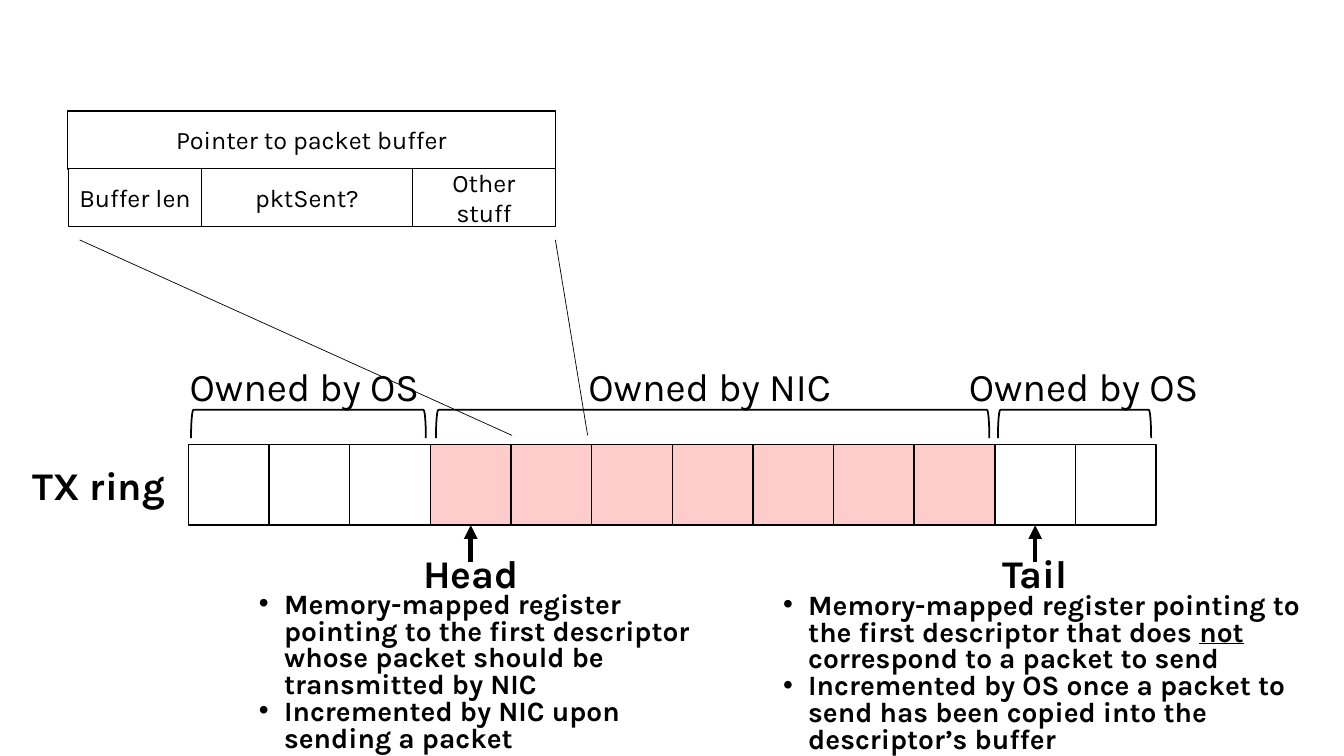
from dataclasses import dataclass

from lxml import etree
from pptx import Presentation
from pptx.dml.color import RGBColor
from pptx.enum.shapes import MSO_CONNECTOR, MSO_SHAPE
from pptx.enum.text import MSO_ANCHOR, PP_ALIGN
from pptx.oxml.ns import qn
from pptx.util import Pt

RECT = MSO_SHAPE.RECTANGLE
BRACKET = MSO_SHAPE.LEFT_BRACKET
STRAIGHT = MSO_CONNECTOR.STRAIGHT
CENTER, LEFT = PP_ALIGN.CENTER, PP_ALIGN.LEFT
MIDDLE, TOP = MSO_ANCHOR.MIDDLE, MSO_ANCHOR.TOP

COLORS = {"ink": "000000", "os": "FFFFFF", "nic": "FFCCCC"}
FIELD = {"name": "Karla", "size": Pt(18), "bold": False}
OWNER = {"name": "Karla", "size": Pt(28), "bold": False}
TITLE = {"name": "Karla", "size": Pt(28), "bold": True}
BULLET = {"name": "Karla", "size": Pt(20), "bold": True}

CELL = 57.6
RING_LEFT, RING_TOP = 134.64, 317.52
BRACKET_TOP, BRACKET_HEIGHT = 292.75, 20.16
ROW_HEIGHT = 41.4
LABEL_HEIGHT = 41.04
POINTER_WIDTH = 96.48


@dataclass
class Box:
    left: float
    top: float
    width: float
    height: float


@dataclass
class Field:
    text: str
    box: Box


@dataclass
class Owner:
    text: str
    color: str
    cells: int
    bracket_left: float
    bracket_width: float
    label: Box


@dataclass
class Pointer:
    name: str
    cell: int
    box: Box
    bullets: list[list[str]]


FIELDS = [
    Field("Pointer to packet buffer", Box(48.24, 79.2, 348.48, ROW_HEIGHT)),
    Field("Buffer len", Box(48.96, 120.4, 95.04, ROW_HEIGHT)),
    Field("pktSent?", Box(144, 120.4, 150.48, ROW_HEIGHT)),
    Field("Other stuff", Box(294.48, 120.4, 102.24, ROW_HEIGHT)),
]
OWNERS = [
    Owner("Owned by OS", "os", 3, 136.44, 167.76, Box(109.44, 255.4, 216, LABEL_HEIGHT)),
    Owner("Owned by NIC", "nic", 7, 311.4, 395.28, Box(307.44, 255.1, 398.88, LABEL_HEIGHT)),
    Owner("Owned by OS", "os", 2, 712.8, 109.44, Box(666, 255.1, 216, LABEL_HEIGHT)),
]
POINTERS = [
    Pointer("Head", 3, Box(177.84, 419.76, 334.8, 114.48), [
        ["Memory-mapped register pointing to the first descriptor whose packet "
         "should be transmitted by NIC"],
        ["Incremented by NIC upon sending a packet"],
    ]),
    Pointer("Tail", 10, Box(552.24, 420.48, 390.96, 129.6), [
        ["Memory-mapped register pointing to the first descriptor that does ",
         "not", " correspond to a packet to send"],
        ["Incremented by OS once a packet to send has been copied into the "
         "descriptor’s buffer"],
    ]),
]
ZOOM_LINES = [(365.76, 311.04, 56.88, 171.36), (419.76, 311.04, 396.72, 171.36)]


def color(key: str) -> RGBColor:
    return RGBColor.from_string(COLORS[key])


def points(box: Box) -> list:
    return [Pt(v) for v in (box.left, box.top, box.width, box.height)]


def add_run(p, text: str, style: dict) -> None:
    r = p.add_run()
    r.text = text
    for name, value in style.items():
        setattr(r.font, name, value)
    r.font.color.rgb = color("ink")


def write(s, text: str, style: dict, anchor) -> None:
    tf = s.text_frame
    tf.word_wrap = True
    tf.vertical_anchor = anchor
    p = tf.paragraphs[0]
    p.alignment = CENTER
    add_run(p, text, style)


def add_label(shapes, box: Box, text: str, style: dict) -> None:
    write(shapes.add_textbox(*points(box)), text, style, TOP)


def add_outline(shapes, kind, box: Box, weight: float, fill: str | None = None):
    s = shapes.add_shape(kind, *points(box))
    s.shadow.inherit = False
    if fill:
        s.fill.solid()
        s.fill.fore_color.rgb = color(fill)
    else:
        s.fill.background()
    s.line.color.rgb = color("ink")
    s.line.width = Pt(weight)
    return s


def add_line(shapes, ends: tuple, weight: float, arrow: bool = False) -> None:
    c = shapes.add_connector(STRAIGHT, *[Pt(v) for v in ends])
    c.line.color.rgb = color("ink")
    c.line.width = Pt(weight)
    spPr = c.element.spPr
    if arrow:
        etree.SubElement(spPr.find(qn("a:ln")), qn("a:tailEnd"), type="triangle")
    etree.SubElement(spPr, qn("a:effectLst"))


def add_bullets(shapes, box: Box, bullets: list[list[str]]) -> None:
    tf = shapes.add_textbox(*points(box)).text_frame
    tf.word_wrap = True
    for i, parts in enumerate(bullets):
        p = tf.add_paragraph() if i else tf.paragraphs[0]
        p.alignment = LEFT
        p.line_spacing = 0.8
        pPr = p._p.get_or_add_pPr()
        pPr.set("marL", str(Pt(18)))
        pPr.set("indent", str(-Pt(18)))
        etree.SubElement(pPr, qn("a:buFont"), typeface="Arial")
        etree.SubElement(pPr, qn("a:buChar"), char="•")
        for text in parts:
            add_run(p, text, BULLET | {"underline": text == "not"})


def add_owner(shapes, owner: Owner) -> None:
    middle = owner.bracket_left + owner.bracket_width / 2
    top = BRACKET_TOP + (BRACKET_HEIGHT - owner.bracket_width) / 2
    box = Box(middle - BRACKET_HEIGHT / 2, top, BRACKET_HEIGHT, owner.bracket_width)
    add_outline(shapes, BRACKET, box, 1.25).rotation = 90
    add_label(shapes, owner.label, owner.text, OWNER)


def add_pointer(shapes, pointer: Pointer) -> None:
    x = RING_LEFT + (pointer.cell + 0.5) * CELL
    box = Box(x - POINTER_WIDTH / 2, 388.8, POINTER_WIDTH, LABEL_HEIGHT)
    add_label(shapes, box, pointer.name, TITLE)
    add_line(shapes, (x, 401.76, x, RING_TOP + CELL), 3.25, arrow=True)
    add_bullets(shapes, pointer.box, pointer.bullets)


def main() -> None:
    prs = Presentation()
    prs.slide_width, prs.slide_height = Pt(960), Pt(540)
    shapes = prs.slides.add_slide(prs.slide_layouts[6]).shapes

    ring = [owner.color for owner in OWNERS for _ in range(owner.cells)]
    for i, fill in enumerate(ring):
        add_outline(shapes, RECT, Box(RING_LEFT + i * CELL, RING_TOP, CELL, CELL), 1, fill)
    for owner in OWNERS:
        add_owner(shapes, owner)
    add_label(shapes, Box(7.2, 326.16, 126.72, LABEL_HEIGHT), "TX ring", TITLE)
    for pointer in POINTERS:
        add_pointer(shapes, pointer)
    for ends in ZOOM_LINES:
        add_line(shapes, ends, 0.5)
    for field in FIELDS:
        write(add_outline(shapes, RECT, field.box, 1, "os"), field.text, FIELD, MIDDLE)

    prs.save("out.pptx")


if __name__ == "__main__":
    main()
